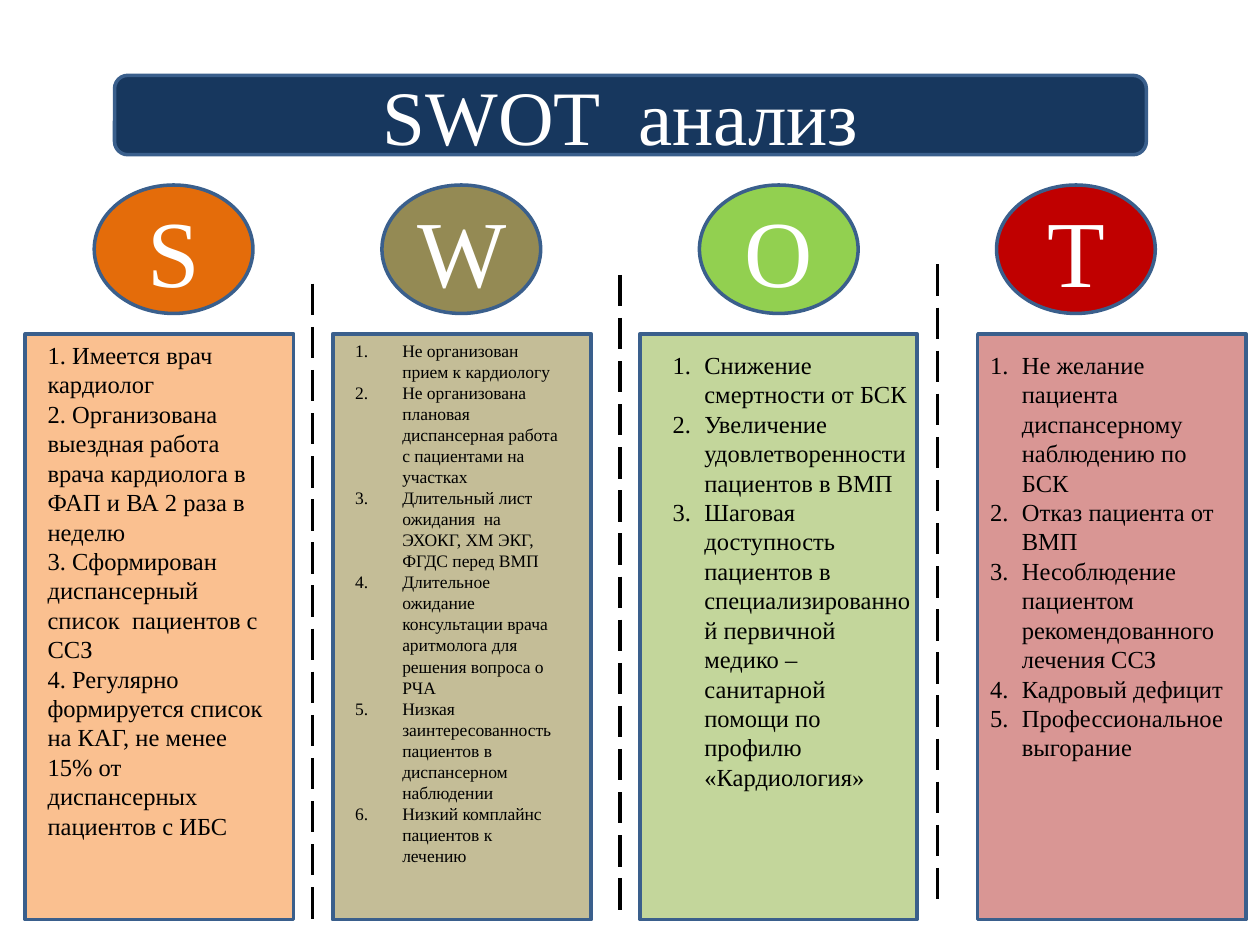
from lxml.etree import SubElement
from pptx import Presentation
from pptx.dml.color import RGBColor
from pptx.enum.dml import MSO_LINE
from pptx.enum.shapes import MSO_CONNECTOR, MSO_SHAPE
from pptx.enum.text import MSO_ANCHOR, MSO_AUTO_SIZE, PP_ALIGN
from pptx.oxml.ns import qn
from pptx.util import Cm, Pt

COLORS = {
    "bar": "17375E", "outline": "3A5F8C", "white": "FFFFFF", "black": "000000",
    "S": "E46C0A", "W": "948A54", "O": "92D050", "T": "C00000",
    "S panel": "FAC090", "W panel": "C4BD97", "O panel": "C3D69B", "T panel": "D99694",
}
BAR = (2.31, 1.52, 20.8, 1.6)
CIRCLE_TOP, CIRCLE_WIDTH, CIRCLE_HEIGHT = 3.73, 3.2, 2.59
PANEL_TOP, PANEL_HEIGHT = 6.73, 11.81
DIVIDERS = [(6.3, 5.72), (12.5, 5.54), (18.9, 5.33)]
DIVIDER_HEIGHT = 12.8

COLUMNS = [
    dict(letter="S", circle=1.9, panel=(0.51, 5.41), box=(0.71, 6.73, 5.0, 11.71),
         size=14, indent=0, items=[
             "1. Имеется врач кардиолог",
             "2. Организована выездная работа врача кардиолога в ФАП и ВА 2 раза в  неделю",
             "3. Сформирован  диспансерный список  пациентов с ССЗ",
             "4. Регулярно формируется список на КАГ, не менее 15% от  диспансерных пациентов с ИБС"]),
    dict(letter="W", circle=7.7, panel=(6.71, 5.21), box=(6.91, 6.73, 4.6, 12.4),
         size=10, indent=0.95, items=[
             "Не организован прием к кардиологу",
             "Не организована плановая  диспансерная работа с пациентами на участках",
             "Длительный лист ожидания  на ЭХОКГ, ХМ ЭКГ, ФГДС перед ВМП",
             "Длительное ожидание консультации врача аритмолога для решения вопроса о РЧА",
             "Низкая заинтересованность пациентов в диспансерном  наблюдении",
             "Низкий комплайнс пациентов к лечению"]),
    dict(letter="O", circle=14.1, panel=(12.9, 5.59), box=(13.31, 6.93, 5.41, 9.25),
         size=14, indent=0.64, items=[
             "Снижение смертности от БСК",
             "Увеличение удовлетворенности пациентов в ВМП",
             "Шаговая доступность пациентов в специализированной первичной медико – "
             "санитарной помощи по профилю «Кардиология»"]),
    dict(letter="T", circle=20.09, panel=(19.71, 5.41), box=(19.71, 6.93, 5.41, 8.64),
         size=14, indent=0.64, items=[
             "Не желание пациента диспансерному наблюдению по БСК",
             "Отказ пациента от ВМП",
             "Несоблюдение пациентом рекомендованного лечения ССЗ",
             "Кадровый дефицит",
             "Профессиональное выгорание"]),
]


def write(paragraph, text, size=14, color="black", align=PP_ALIGN.LEFT, font="Times New Roman"):
    """Put formatted text into a paragraph."""
    paragraph.alignment = align
    run = paragraph.add_run()
    run.text = text
    run.font.name = font
    run.font.size = Pt(size)
    run.font.color.rgb = RGBColor.from_string(COLORS[color])


class SlidePainter:
    """Hold the shared style and draw each kind of element on the slide."""

    def __init__(self, slide, outline="outline", outline_width=2):
        self.slide = slide
        self.outline = RGBColor.from_string(COLORS[outline])
        self.outline_width = Pt(outline_width)

    def title(self, text, left, top, width, height):
        title = self.slide.shapes.title
        title.left, title.top, title.width, title.height = map(Cm, (left, top, width, height))
        frame = title.text_frame
        frame.auto_size = MSO_AUTO_SIZE.NONE
        frame.vertical_anchor = MSO_ANCHOR.MIDDLE
        write(frame.paragraphs[0], text, size=44, color="white", align=PP_ALIGN.CENTER)

    def shape(self, kind, fill, left, top, width, height, text=None):
        shape = self.slide.shapes.add_shape(kind, *map(Cm, (left, top, width, height)))
        shape.shadow.inherit = False
        shape.fill.solid()
        shape.fill.fore_color.rgb = RGBColor.from_string(COLORS[fill])
        shape.line.color.rgb = self.outline
        shape.line.width = self.outline_width
        if text:
            shape.text_frame.vertical_anchor = MSO_ANCHOR.MIDDLE
            write(shape.text_frame.paragraphs[0], text, size=54, color="white",
                  align=PP_ALIGN.CENTER)
        return shape

    def divider(self, left, top, height):
        line = self.slide.shapes.add_connector(
            MSO_CONNECTOR.STRAIGHT, *map(Cm, (left, top, left, top + height)))
        line.line.color.rgb = RGBColor.from_string(COLORS["black"])
        line.line.width = Pt(2.25)
        line.line.dash_style = MSO_LINE.LONG_DASH
        SubElement(line._element.spPr, qn("a:effectLst"))

    def item_list(self, items, box, size, indent):
        frame = self.slide.shapes.add_textbox(*map(Cm, box)).text_frame
        frame.word_wrap = True
        for index, item in enumerate(items):
            paragraph = frame.add_paragraph() if index else frame.paragraphs[0]
            write(paragraph, item, size=size)
            if indent:
                properties = paragraph._p.get_or_add_pPr()
                properties.set("marL", str(Cm(indent)))
                properties.set("indent", str(-Cm(indent)))
                SubElement(properties, qn("a:buFont"), typeface="+mj-lt")
                SubElement(properties, qn("a:buAutoNum"), type="arabicPeriod")


def main():
    """Build the SWOT slide."""
    presentation = Presentation()
    presentation.slide_width, presentation.slide_height = Cm(25.4), Cm(19.05)
    slide = presentation.slides.add_slide(presentation.slide_layouts[5])
    painter = SlidePainter(slide)

    bar = painter.shape(MSO_SHAPE.ROUNDED_RECTANGLE, "bar", *BAR)
    slide.shapes.title._element.addprevious(bar._element)
    painter.title("SWOT  анализ ", *BAR)

    for left, top in DIVIDERS:
        painter.divider(left, top, DIVIDER_HEIGHT)
    for column in COLUMNS:
        letter = column["letter"]
        panel_left, panel_width = column["panel"]
        painter.shape(MSO_SHAPE.OVAL, letter, column["circle"], CIRCLE_TOP,
                      CIRCLE_WIDTH, CIRCLE_HEIGHT, text=letter)
        painter.shape(MSO_SHAPE.RECTANGLE, f"{letter} panel", panel_left, PANEL_TOP,
                      panel_width, PANEL_HEIGHT)
        painter.item_list(column["items"], column["box"], column["size"], column["indent"])

    presentation.save("out.pptx")


if __name__ == "__main__":
    main()
